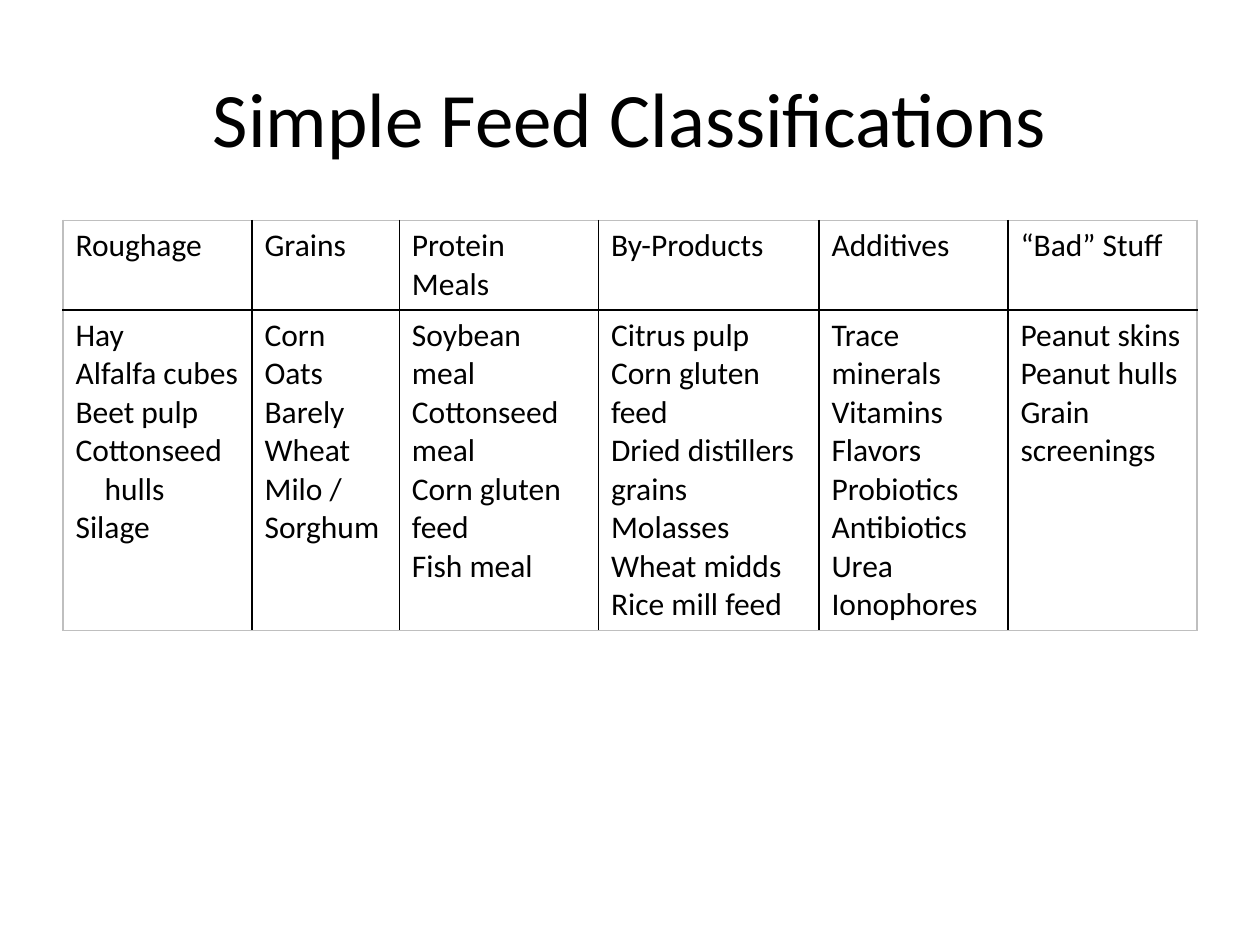
from lxml import etree
from pptx import Presentation
from pptx.dml.color import RGBColor
from pptx.enum.text import MSO_ANCHOR, PP_ALIGN
from pptx.oxml.ns import qn
from pptx.util import Inches, Pt

BLACK = RGBColor(0x00, 0x00, 0x00)
GREY = RGBColor(0xBF, 0xBF, 0xBF)
CENTER, LEFT = PP_ALIGN.CENTER, PP_ALIGN.LEFT
MIDDLE, TOP = MSO_ANCHOR.MIDDLE, MSO_ANCHOR.TOP
TITLE_ONLY = 5

SLIDE_WIDTH, SLIDE_HEIGHT = Inches(10), Inches(7.5)
MARGIN = 0.05  # share of the slide's width
COLUMN_WIDTHS = [1.5, 1.17, 1.58, 1.75, 1.5, 1.5]
ROW_HEIGHTS = [0.71, 2.54]
HANGING_ITEM = "Cottonseed hulls"
HANGING_INDENT = Inches(0.23)

FEEDS = {
    "Roughage": ["Hay", "Alfalfa cubes", "Beet pulp", HANGING_ITEM, "Silage"],
    "Grains": ["Corn", "Oats", "Barely", "Wheat", "Milo / Sorghum"],
    "Protein Meals": ["Soybean meal", "Cottonseed meal", "Corn gluten feed",
                      "Fish meal"],
    "By-Products": ["Citrus pulp", "Corn gluten feed",
                    "Dried distillers grains", "Molasses", "Wheat midds",
                    "Rice mill feed"],
    "Additives": ["Trace minerals", "Vitamins", "Flavors", "Probiotics",
                  "Antibiotics", "Urea", "Ionophores"],
    "“Bad” Stuff": ["Peanut skins", "Peanut hulls", "Grain screenings"],
}


def write_text(text_frame, lines, size=18, color=BLACK, align=LEFT):
    for index, line in enumerate(lines):
        paragraph = (text_frame.add_paragraph() if index
                     else text_frame.paragraphs[0])
        paragraph.alignment = align
        run = paragraph.add_run()
        run.text = line
        run.font.name = "Calibri"
        run.font.size = Pt(size)
        run.font.color.rgb = color
        if line == HANGING_ITEM:
            properties = paragraph._p.get_or_add_pPr()
            properties.set("marL", str(HANGING_INDENT))
            properties.set("indent", str(-HANGING_INDENT))


def set_border(cell, side, color, width):
    """Draw one side of a cell; side is L, R, T or B."""
    properties = cell._tc.get_or_add_tcPr()
    line = etree.SubElement(properties, qn(f"a:ln{side}"), w=str(Pt(width)))
    fill = etree.SubElement(line, qn("a:solidFill"))
    etree.SubElement(fill, qn("a:srgbClr"), val=str(color))


def add_title(slide, text, left, top, width, height):
    title = slide.shapes.title
    title.left, title.top, title.width, title.height = left, top, width, height
    title.text_frame.vertical_anchor = MIDDLE
    write_text(title.text_frame, [text], size=44, align=CENTER)


def add_feed_table(slide, left, top, width, height):
    row_count, column_count = len(ROW_HEIGHTS), len(FEEDS)
    table = slide.shapes.add_table(row_count, column_count, left, top,
                                   width, height).table
    table.first_row = table.horz_banding = False
    for column, share in zip(table.columns, COLUMN_WIDTHS):
        column.width = int(width * share / sum(COLUMN_WIDTHS))
    for row, share in zip(table.rows, ROW_HEIGHTS):
        row.height = int(height * share / sum(ROW_HEIGHTS))

    for column, (heading, feeds) in enumerate(FEEDS.items()):
        for row, lines in enumerate([[heading], feeds]):
            cell = table.cell(row, column)
            cell.vertical_anchor = TOP
            write_text(cell.text_frame, lines)
            outer_sides = {"L": column == 0, "R": column == column_count - 1,
                           "T": row == 0, "B": row == row_count - 1}
            for side, is_outer in outer_sides.items():
                set_border(cell, side, GREY if is_outer else BLACK, 1)
            cell.fill.background()


def main():
    presentation = Presentation()
    presentation.slide_width = SLIDE_WIDTH
    presentation.slide_height = SLIDE_HEIGHT
    slide = presentation.slides.add_slide(
        presentation.slide_layouts[TITLE_ONLY])
    left = int(SLIDE_WIDTH * MARGIN)
    width = SLIDE_WIDTH - 2 * left
    add_title(slide, "Simple Feed Classifications", left,
              int(SLIDE_HEIGHT * 0.04), width, SLIDE_HEIGHT // 6)
    add_feed_table(slide, left, Inches(1.75), width,
                   Inches(sum(ROW_HEIGHTS)))
    presentation.save("out.pptx")


if __name__ == "__main__":
    main()
